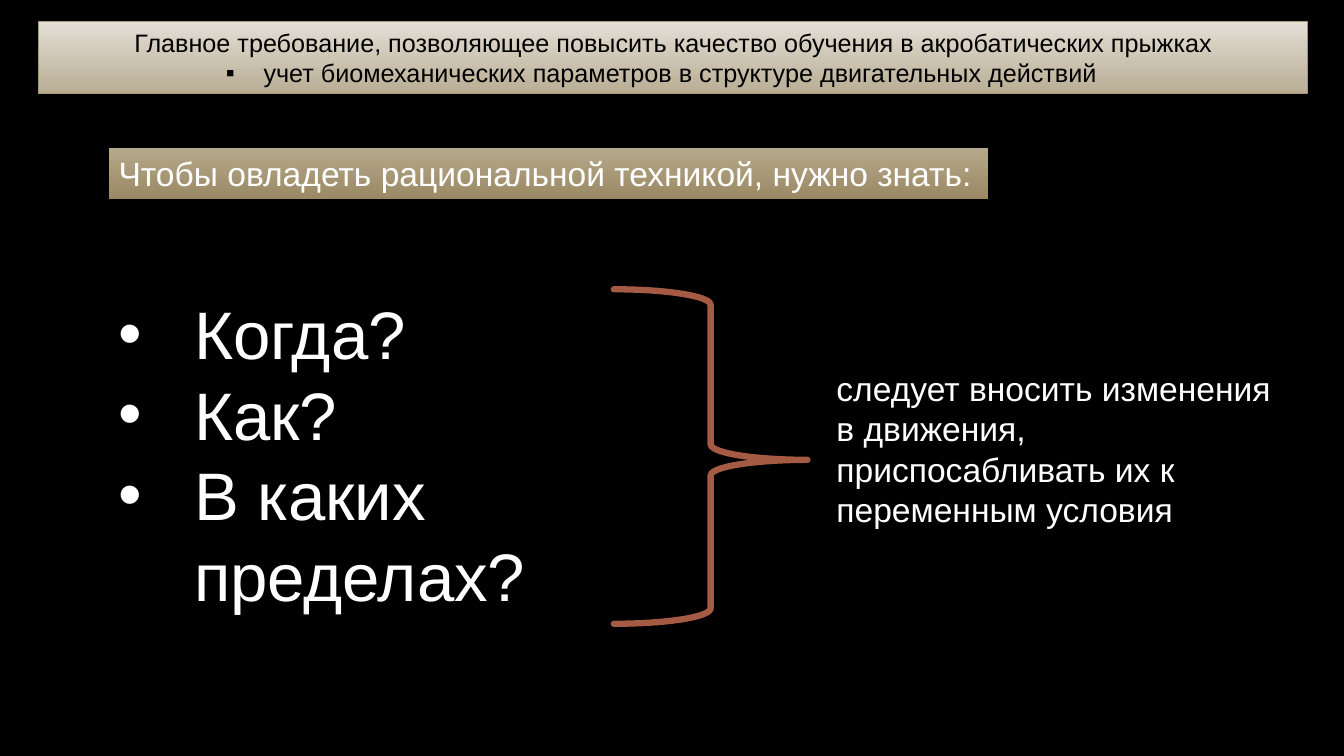
from lxml.etree import SubElement
from pptx import Presentation
from pptx.dml.color import RGBColor
from pptx.enum.shapes import MSO_SHAPE
from pptx.enum.text import MSO_ANCHOR, PP_ALIGN
from pptx.oxml.ns import qn
from pptx.util import Cm, Pt

THEME = {
    "font": "Arial",
    "background": RGBColor.from_string("000000"),
    "dark": RGBColor.from_string("000000"),
    "light": RGBColor.from_string("FFFFFF"),
    "brace": RGBColor.from_string("A55A43"),
    "border": RGBColor.from_string("A59675"),
    "header_gradient": ("E3DFD6", "B9AD94"),
    "banner_gradient": ("B6A88B", "9A8964"),
    "header_size": Pt(18),
    "body_size": Pt(24),
    "question_size": Pt(48),
}


def write_text(shape, lines, size, color, alignment=PP_ALIGN.LEFT, anchor=MSO_ANCHOR.TOP):
    frame = shape.text_frame
    frame.text = "\n".join(lines)
    frame_format = {
        "word_wrap": True,
        "vertical_anchor": anchor,
        "margin_left": Cm(0.25),
        "margin_right": Cm(0.25),
        "margin_top": Cm(0.13),
        "margin_bottom": Cm(0.13),
    }
    for name, value in frame_format.items():
        setattr(frame, name, value)
    font_format = {"name": THEME["font"], "size": size}
    for paragraph in frame.paragraphs:
        paragraph.alignment = alignment
        font = paragraph.runs[0].font
        for name, value in font_format.items():
            setattr(font, name, value)
        font.color.rgb = color
    return frame.paragraphs


def add_bullet(paragraph, character, indent, right_margin=Cm(0)):
    properties = paragraph._p.get_or_add_pPr()
    bullet_format = {"marL": indent, "marR": right_margin, "indent": -indent}
    for name, value in bullet_format.items():
        properties.set(name, str(int(value)))
    SubElement(properties, qn("a:buFont")).set("typeface", THEME["font"])
    SubElement(properties, qn("a:buChar")).set("char", character)


presentation = Presentation()
presentation.slide_width = Cm(33.87)
presentation.slide_height = Cm(19.05)
slide = presentation.slides.add_slide(presentation.slide_layouts[6])
slide.background.fill.solid()
slide.background.fill.fore_color.rgb = THEME["background"]

header = slide.shapes.add_shape(MSO_SHAPE.RECTANGLE, Cm(0.98), Cm(0.55), Cm(31.98), Cm(1.8))
banner = slide.shapes.add_shape(MSO_SHAPE.RECTANGLE, Cm(2.74), Cm(3.73), Cm(22.17), Cm(1.28))
for shape, gradient in ((header, "header_gradient"), (banner, "banner_gradient")):
    shape.shadow.inherit = False
    shape.fill.gradient()
    shape.fill.gradient_angle = 270
    for stop, color, position in zip(shape.fill.gradient_stops, THEME[gradient], (0, 1)):
        stop.color.rgb = RGBColor.from_string(color)
        stop.position = position
header.line.color.rgb = THEME["border"]
header.line.width = Pt(0.75)
banner.line.fill.background()

header_paragraphs = write_text(
    header,
    [
        "Главное требование, позволяющее повысить качество обучения в акробатических прыжках",
        "учет биомеханических параметров в структуре двигательных действий",
    ],
    THEME["header_size"],
    THEME["dark"],
    PP_ALIGN.CENTER,
    MSO_ANCHOR.MIDDLE,
)
add_bullet(header_paragraphs[1], "▪", Cm(0.95), Cm(0.6))

write_text(
    banner,
    ["Чтобы овладеть рациональной техникой, нужно знать:"],
    THEME["body_size"],
    THEME["light"],
)

questions = slide.shapes.add_textbox(Cm(2.74), Cm(7.24), Cm(12.01), Cm(8.46))
question_lines = ["Когда?", "Как?", "В каких пределах?"]
for paragraph in write_text(questions, question_lines, THEME["question_size"], THEME["light"]):
    add_bullet(paragraph, "•", Cm(1.9))

conclusion = slide.shapes.add_textbox(Cm(20.83), Cm(9.14), Cm(11.68), Cm(4.37))
write_text(
    conclusion,
    ["следует вносить изменения в движения, приспосабливать их к переменным условия"],
    THEME["body_size"],
    THEME["light"],
)

brace = slide.shapes.add_shape(MSO_SHAPE.RIGHT_BRACE, Cm(15.47), Cm(7.29), Cm(4.88), Cm(8.43))
brace.shadow.inherit = False
brace.adjustments[0] = 0.08
brace.adjustments[1] = 0.51
brace.fill.background()
brace.line.color.rgb = THEME["brace"]
brace.line.width = Pt(4.5)
brace._element.spPr.find(qn("a:ln")).set("cap", "rnd")

presentation.save("out.pptx")
